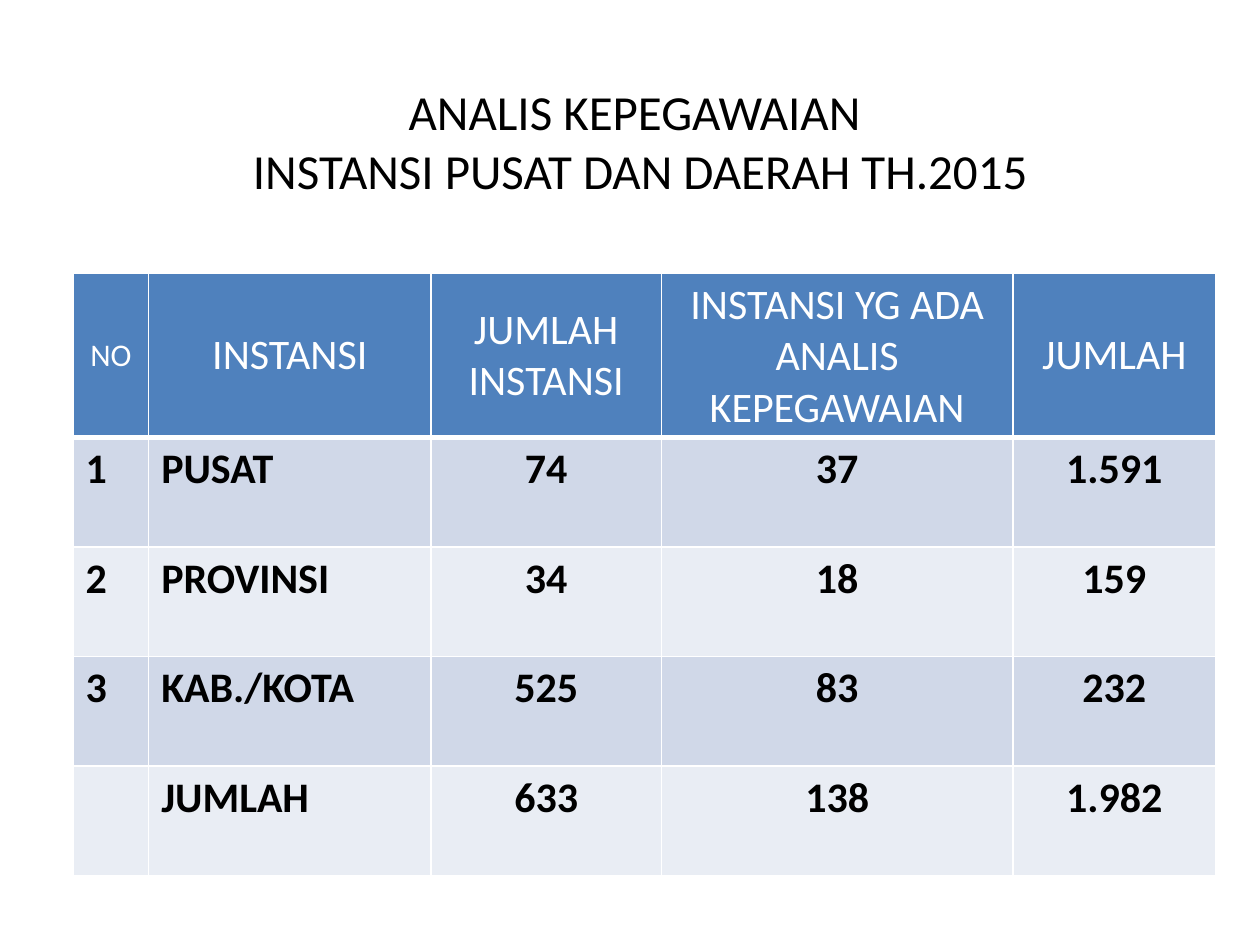
from dataclasses import dataclass
from typing import Any

from lxml.etree import SubElement
from pptx import Presentation
from pptx.dml.color import RGBColor as RGB
from pptx.enum.text import MSO_ANCHOR as Anchor, MSO_AUTO_SIZE as AutoSize, PP_ALIGN as Align
from pptx.oxml.ns import qn
from pptx.util import Pt


@dataclass(frozen=True)
class Theme:
    font: str = "Calibri"
    ink: str = "000000"
    white: str = "FFFFFF"
    header: str = "4F81BD"
    bands: tuple[str, str] = ("D0D8E8", "E9EDF4")
    title_size: float = 28
    small_size: float = 18
    table_size: float = 24
    line: float = 1
    heavy_line: float = 3


@dataclass(frozen=True)
class Column:
    heading: str
    width: float
    align: Align = Align.CENTER
    heading_size: float = Theme.table_size


THEME = Theme()
COLUMNS = (
    Column("NO", 43.2, Align.LEFT, THEME.small_size),
    Column("INSTANSI", 161.28, Align.LEFT),
    Column("JUMLAH INSTANSI", 131.76),
    Column("INSTANSI YG ADA ANALIS KEPEGAWAIAN", 200.88),
    Column("JUMLAH", 115.92),
)
ROWS = (
    ("1", "PUSAT", "74", "37", "1.591"),
    ("2", "PROVINSI", "34", "18", "159"),
    ("3", "KAB./KOTA", "525", "83", "232"),
    ("", "JUMLAH", "633", "138", "1.982"),
)
TITLE = ("ANALIS KEPEGAWAIAN ", "INSTANSI PUSAT DAN DAERAH TH.2015")
HEADER_HEIGHT = 93
ROW_HEIGHT = 62.64


def add_run(p: Any, text: str, size: float, color: str, bold: bool = False) -> None:
    r = p.add_run()
    r.text = text
    r.font.name = THEME.font
    r.font.size = Pt(size)
    r.font.bold = bold
    r.font.color.rgb = RGB.from_string(color)


def fill_cell(cell: Any, text: str, size: float, color: str, fill: str,
              align: Align, bold: bool) -> None:
    p = cell.text_frame.paragraphs[0]
    p.alignment = align
    p.font.size = Pt(size)
    if text:
        add_run(p, text, size, color, bold)
    cell.fill.solid()
    cell.fill.fore_color.rgb = RGB.from_string(fill)


def set_header_borders(cell: Any) -> None:
    props = cell._tc.get_or_add_tcPr()
    for i, side in enumerate(("lnL", "lnR", "lnT", "lnB")):
        width = THEME.heavy_line if side == "lnB" else THEME.line
        ln = SubElement(props, qn(f"a:{side}"), w=str(Pt(width)))
        SubElement(SubElement(ln, qn("a:solidFill")), qn("a:srgbClr"), val=THEME.white)
        props.insert(i, ln)


def add_title(s: Any) -> None:
    sp = s.shapes.title
    sp.left, sp.top, sp.width, sp.height = Pt(87.84), Pt(43.2), Pt(555.84), Pt(74.88)
    tf = sp.text_frame
    tf.word_wrap = True
    tf.auto_size = AutoSize.SHAPE_TO_FIT_TEXT
    tf.vertical_anchor = Anchor.TOP
    for i, line in enumerate(TITLE):
        p = tf.add_paragraph() if i else tf.paragraphs[0]
        p.alignment = Align.CENTER
        add_run(p, line, THEME.title_size, THEME.ink)


def add_staff_table(s: Any) -> None:
    width = sum(col.width for col in COLUMNS)
    height = HEADER_HEIGHT + ROW_HEIGHT * len(ROWS)
    table = s.shapes.add_table(len(ROWS) + 1, len(COLUMNS), Pt(41.76), Pt(156.24),
                               Pt(width), Pt(height)).table
    for i, row in enumerate(table.rows):
        row.height = Pt(ROW_HEIGHT if i else HEADER_HEIGHT)
    for j, col in enumerate(COLUMNS):
        table.columns[j].width = Pt(col.width)
        head = table.cell(0, j)
        fill_cell(head, col.heading, col.heading_size, THEME.white, THEME.header,
                  Align.CENTER, False)
        head.vertical_anchor = Anchor.MIDDLE
        set_header_borders(head)
        for i, values in enumerate(ROWS):
            fill_cell(table.cell(i + 1, j), values[j], THEME.table_size, THEME.ink,
                      THEME.bands[i % 2], col.align, True)


def main() -> None:
    prs = Presentation()
    prs.slide_width, prs.slide_height = Pt(720), Pt(540)
    s = prs.slides.add_slide(prs.slide_layouts[5])
    add_title(s)
    add_staff_table(s)
    prs.save("out.pptx")


if __name__ == "__main__":
    main()
